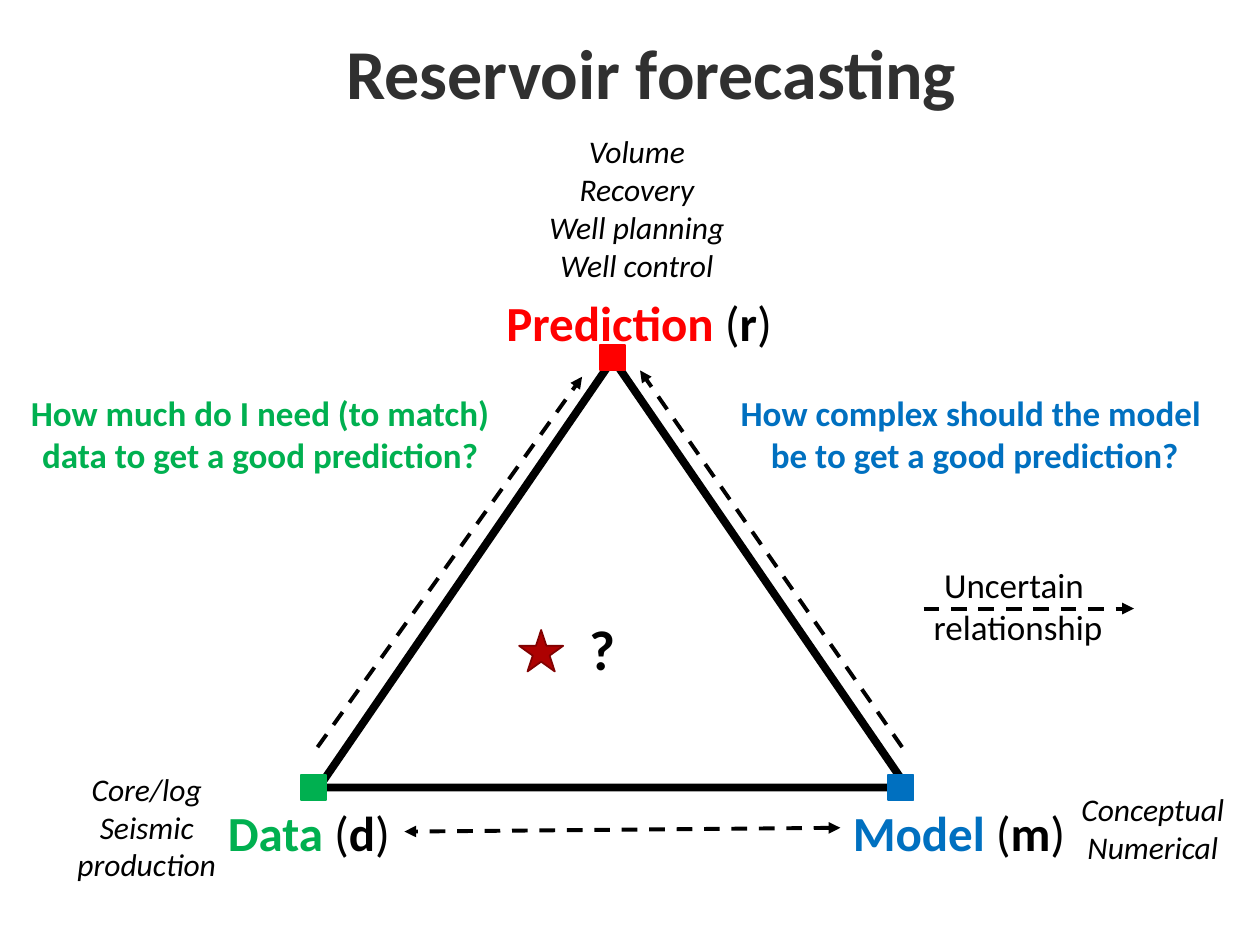
"""Build the reservoir forecasting triangle slide."""
from lxml import etree
from pptx import Presentation
from pptx.dml.color import RGBColor
from pptx.enum.dml import MSO_LINE
from pptx.enum.shapes import MSO_CONNECTOR, MSO_SHAPE
from pptx.enum.text import MSO_ANCHOR, MSO_AUTO_SIZE, PP_ALIGN
from pptx.oxml.ns import qn
from pptx.util import Inches, Pt

COLUMNS, ROWS = 100, 75
CELL = Inches(0.1)
FONT = "Calibri"
BLACK, RED, GREEN, BLUE = "000000", "FF0000", "00B050", "0070C0"
TRIANGLE, SQUARE, STAR = MSO_SHAPE.ISOSCELES_TRIANGLE, MSO_SHAPE.RECTANGLE, MSO_SHAPE.STAR_5_POINT
STRAIGHT, DASH = MSO_CONNECTOR.STRAIGHT, MSO_LINE.DASH
LEFT, CENTER = PP_ALIGN.LEFT, PP_ALIGN.CENTER
BOTTOM, GROW = MSO_ANCHOR.BOTTOM, MSO_AUTO_SIZE.SHAPE_TO_FIT_TEXT
MARKER = 2


def grid(*cells):
    """Turn grid columns and rows into slide lengths."""
    return [round(cell * CELL) for cell in cells]


def color(hex_string):
    """Turn a hex string into a colour."""
    return RGBColor.from_string(hex_string)


def write_text(frame, lines, size=18, fill=BLACK, bold=False, italic=False, align=CENTER):
    """Write lines, each a string or a list of (text, colour, bold) runs."""
    for index, line in enumerate(lines):
        paragraph = frame.paragraphs[0] if index == 0 else frame.add_paragraph()
        paragraph.alignment = align
        runs = [(line, fill, bold)] if isinstance(line, str) else line
        for text, run_fill, run_bold in runs:
            run = paragraph.add_run()
            run.text = text
            run.font.name, run.font.size = FONT, Pt(size)
            run.font.bold, run.font.italic = run_bold, italic
            run.font.color.rgb = color(run_fill)


def add_title(slide, box, text):
    """Place and format the title placeholder."""
    title = slide.shapes.title
    title.left, title.top, title.width, title.height = grid(*box)
    frame = title.text_frame
    frame.vertical_anchor = BOTTOM
    frame.margin_bottom = Inches(0.1)
    write_text(frame, [text], size=40, fill="303030", bold=True)


def add_text(slide, box, lines, wrap=False, **style):
    """Add a text box that fits its lines."""
    frame = slide.shapes.add_textbox(*grid(*box)).text_frame
    frame.word_wrap = wrap
    frame.auto_size = GROW
    write_text(frame, lines, **style)


def add_corner_label(slide, box, name, symbol, fill):
    """Add a coloured name followed by its symbol in brackets."""
    runs = [(name, fill, True), (" (", BLACK, False), (symbol, BLACK, True), (")", BLACK, False)]
    add_text(slide, box, [runs], size=28, align=LEFT)


def add_figure(slide, kind, box, line, fill=None, width=1):
    """Add a preset shape, hollow when it has no fill."""
    shape = slide.shapes.add_shape(kind, *grid(*box))
    shape.shadow.inherit = False
    if fill:
        shape.fill.solid()
        shape.fill.fore_color.rgb = color(fill)
    else:
        shape.fill.background()
    shape.line.color.rgb = color(line)
    shape.line.width = Pt(width)


def add_dashed_arrow(slide, start, end, ends=("tailEnd",)):
    """Add a dashed arrow with heads at the given ends."""
    arrow = slide.shapes.add_connector(STRAIGHT, *grid(*start, *end))
    arrow.line.color.rgb = color(BLACK)
    arrow.line.width = Pt(2.25)
    arrow.line.dash_style = DASH
    line = arrow.line._get_or_add_ln()
    for end_name in ends:
        etree.SubElement(line, qn(f"a:{end_name}"), type="triangle")
    etree.SubElement(arrow._element.spPr, qn("a:effectLst"))


def main():
    """Build and save the slide."""
    presentation = Presentation()
    presentation.slide_width, presentation.slide_height = grid(COLUMNS, ROWS)
    slide = presentation.slides.add_slide(presentation.slide_layouts[5])
    add_title(slide, (9.2, -2.5, 85, 12.5), "Reservoir forecasting")

    add_figure(slide, TRIANGLE, (25.3, 28.5, 46.7, 34), BLACK, width=4.5)
    corners = [
        ("Prediction", "r", RED, (47.6, 27.4), (39.2, 22.7, 23.4, 5.7)),
        ("Data", "d", GREEN, (23.9, 61.5), (17.1, 63.2, 15.1, 5.7)),
        ("Model", "m", BLUE, (70.5, 61.5), (66.7, 63.2, 19.1, 5.7)),
    ]
    for name, symbol, fill, position, label_box in corners:
        add_figure(slide, SQUARE, (*position, MARKER, MARKER), fill, fill)
        add_corner_label(slide, label_box, name, symbol, fill)

    examples = [
        ((42.5, 10, 16.1, 13.1), ["Volume", "Recovery", "Well planning", "Well control"]),
        ((5, 60.6, 13.3, 10.1), ["Core/log", "Seismic", "production"]),
        ((84.7, 62.2, 13.6, 7.1), ["Conceptual", "Numerical"]),
    ]
    for box, lines in examples:
        add_text(slide, box, lines, italic=True)

    add_dashed_arrow(slide, (25.2, 59.3), (46.2, 29.9))
    add_dashed_arrow(slide, (71.6, 59.3), (50.8, 29.4))
    add_dashed_arrow(slide, (66.7, 65.7), (32.1, 66), ends=("headEnd", "tailEnd"))

    add_text(slide, (1.3, 30.6, 38.7, 7.7),
             ["How much do I need (to match)", "data to get a good prediction?"],
             size=20, fill=GREEN, bold=True)
    add_text(slide, (55.8, 30.6, 42.5, 7.7),
             ["How complex should the model", " be to get a good prediction?"],
             wrap=True, size=20, fill=BLUE, bold=True)

    add_figure(slide, STAR, (41.2, 50, 3.5, 3.3), "800101", "AD0101")
    add_text(slide, (45.8, 48.3, 4.1, 6.4), ["?"], size=32, bold=True, align=LEFT)

    add_dashed_arrow(slide, (73.3, 48.3), (90, 48.3))
    add_text(slide, (73, 44.2, 15.6, 7.7), ["Uncertain ", "relationship"], size=20)
    presentation.save("out.pptx")


if __name__ == "__main__":
    main()
